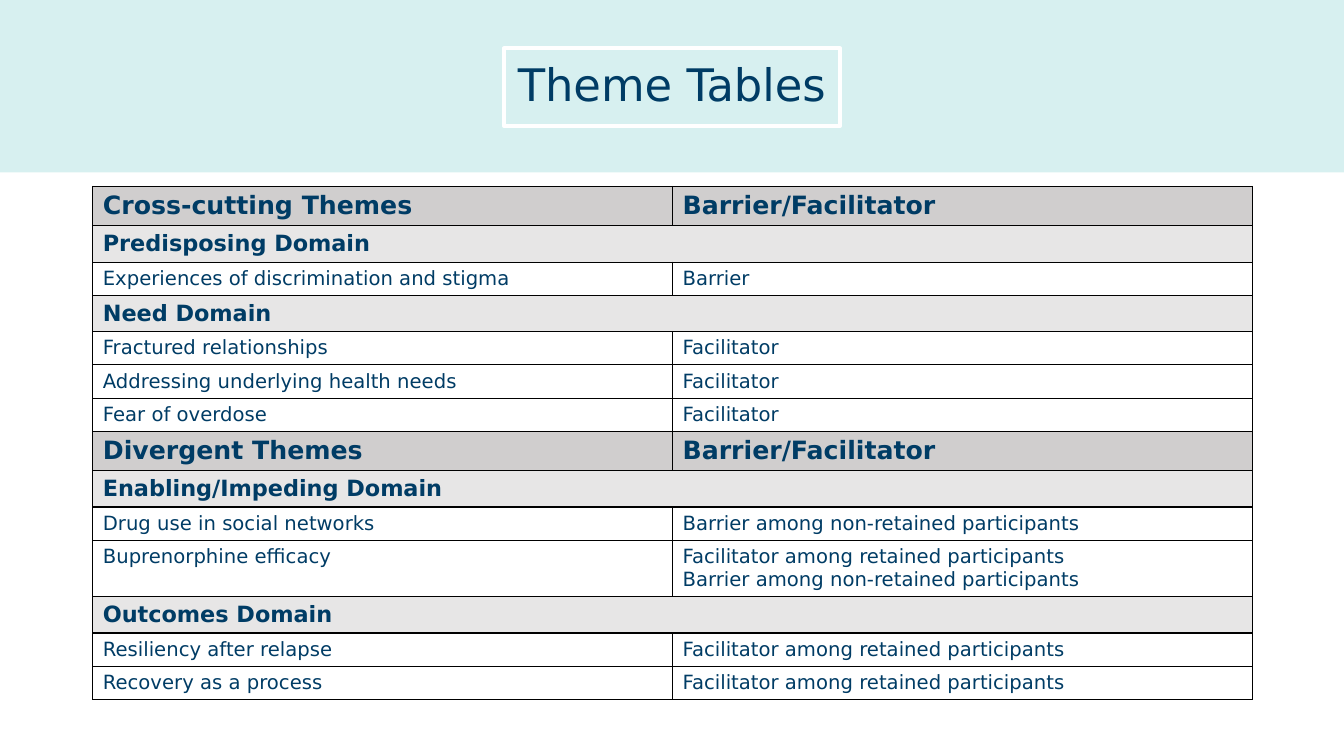
from dataclasses import dataclass

from lxml import etree
from pptx import Presentation
from pptx.dml.color import RGBColor
from pptx.enum.shapes import MSO_SHAPE
from pptx.enum.text import MSO_ANCHOR, MSO_AUTO_SIZE, PP_ALIGN
from pptx.oxml.ns import qn
from pptx.util import Inches, Pt

RECTANGLE = MSO_SHAPE.RECTANGLE
MIDDLE = MSO_ANCHOR.MIDDLE
CENTER = PP_ALIGN.CENTER
NO_AUTOFIT = MSO_AUTO_SIZE.NONE

# Content: row kind, then the text of each cell
TITLE = "Theme Tables"
RETAINED = "Facilitator among retained participants"
NON_RETAINED = "Barrier among non-retained participants"
ROWS = [
    ("header", "Cross-cutting Themes", "Barrier/Facilitator"),
    ("domain", "Predisposing Domain"),
    ("theme", "Experiences of discrimination and stigma", "Barrier"),
    ("domain", "Need Domain"),
    ("theme", "Fractured relationships", "Facilitator"),
    ("theme", "Addressing underlying health needs", "Facilitator"),
    ("theme", "Fear of overdose", "Facilitator"),
    ("header", "Divergent Themes", "Barrier/Facilitator"),
    ("domain", "Enabling/Impeding Domain"),
    ("theme", "Drug use in social networks", NON_RETAINED),
    ("theme", "Buprenorphine efficacy", RETAINED + "\n" + NON_RETAINED),
    ("domain", "Outcomes Domain"),
    ("theme", "Resiliency after relapse", RETAINED),
    ("theme", "Recovery as a process", RETAINED),
]


@dataclass(frozen=True)
class Theme:
    font: str = "DejaVu Sans"
    text: str = "003C65"
    band: str = "B0E3E2"
    band_alpha: int = 50
    frame: str = "FFFFFF"
    border: str = "000000"
    title_size: int = 32


@dataclass(frozen=True)
class RowStyle:
    size: int
    bold: bool
    fill: str
    height: float


THEME = Theme()
ROW_STYLES = {
    "header": RowStyle(18, True, "D0CECE", 0.39),
    "domain": RowStyle(16, True, "E7E6E6", 0.36),
    "theme": RowStyle(14, False, "", 0.33),
}
EXTRA_LINE = 0.23
COLUMN_WIDTH = 5.75


def add_text(paragraph, text, size, bold=False):
    run = paragraph.add_run()
    run.text = text
    run.font.name = THEME.font
    run.font.size = Pt(size)
    run.font.bold = bold
    run.font.color.rgb = RGBColor.from_string(THEME.text)


def set_borders(cell):
    properties = cell._tc.get_or_add_tcPr()
    for position, side in enumerate(("lnL", "lnR", "lnT", "lnB")):
        line = etree.Element(qn("a:" + side), w=str(Pt(1)))
        fill = etree.SubElement(line, qn("a:solidFill"))
        etree.SubElement(fill, qn("a:srgbClr"), val=THEME.border)
        properties.insert(position, line)


def add_band(slide, width):
    band = slide.shapes.add_shape(RECTANGLE, 0, 0, width, Inches(1.71))
    band.shadow.inherit = False
    band.line.fill.background()
    band.fill.solid()
    band.fill.fore_color.rgb = RGBColor.from_string(THEME.band)
    color = band._element.spPr.find(".//" + qn("a:srgbClr"))
    etree.SubElement(color, qn("a:alpha"), val=str(THEME.band_alpha * 1000))


def place_title(slide):
    title = slide.shapes.title
    title.left, title.top = Inches(5), Inches(0.48)
    title.width, title.height = Inches(3.33), Inches(0.77)
    title.line.color.rgb = RGBColor.from_string(THEME.frame)
    title.line.width = Pt(3)
    frame = title.text_frame
    frame.auto_size = NO_AUTOFIT
    frame.vertical_anchor = MIDDLE
    paragraph = frame.paragraphs[0]
    paragraph.alignment = CENTER
    paragraph.line_spacing = 0.9
    add_text(paragraph, TITLE, THEME.title_size)
    # Bring the title in front of the band
    slide.shapes._spTree.append(title._element)


def add_theme_table(slide):
    heights = [
        ROW_STYLES[kind].height + EXTRA_LINE * max(text.count("\n") for text in texts)
        for kind, *texts in ROWS
    ]
    table = slide.shapes.add_table(
        len(ROWS), 2, Inches(0.92), Inches(1.85),
        Inches(2 * COLUMN_WIDTH), Inches(sum(heights)),
    ).table
    table.first_row = False
    table.horz_banding = False
    for column in table.columns:
        column.width = Inches(COLUMN_WIDTH)

    for row_index, (kind, *texts) in enumerate(ROWS):
        style = ROW_STYLES[kind]
        table.rows[row_index].height = Inches(heights[row_index])
        cells = [table.cell(row_index, column) for column in range(2)]
        if len(texts) == 1:
            cells[0].merge(cells[1])
        for cell in cells:
            if style.fill:
                cell.fill.solid()
                cell.fill.fore_color.rgb = RGBColor.from_string(style.fill)
            else:
                cell.fill.background()
            set_borders(cell)
        for cell, text in zip(cells, texts):
            frame = cell.text_frame
            for index, line in enumerate(text.split("\n")):
                paragraph = frame.add_paragraph() if index else frame.paragraphs[0]
                add_text(paragraph, line, style.size, style.bold)


def main():
    presentation = Presentation()
    presentation.slide_width = Inches(13.33)
    presentation.slide_height = Inches(7.5)
    title_only = presentation.slide_layouts[5]
    slide = presentation.slides.add_slide(title_only)
    add_band(slide, presentation.slide_width)
    place_title(slide)
    add_theme_table(slide)
    presentation.save("out.pptx")


if __name__ == "__main__":
    main()
